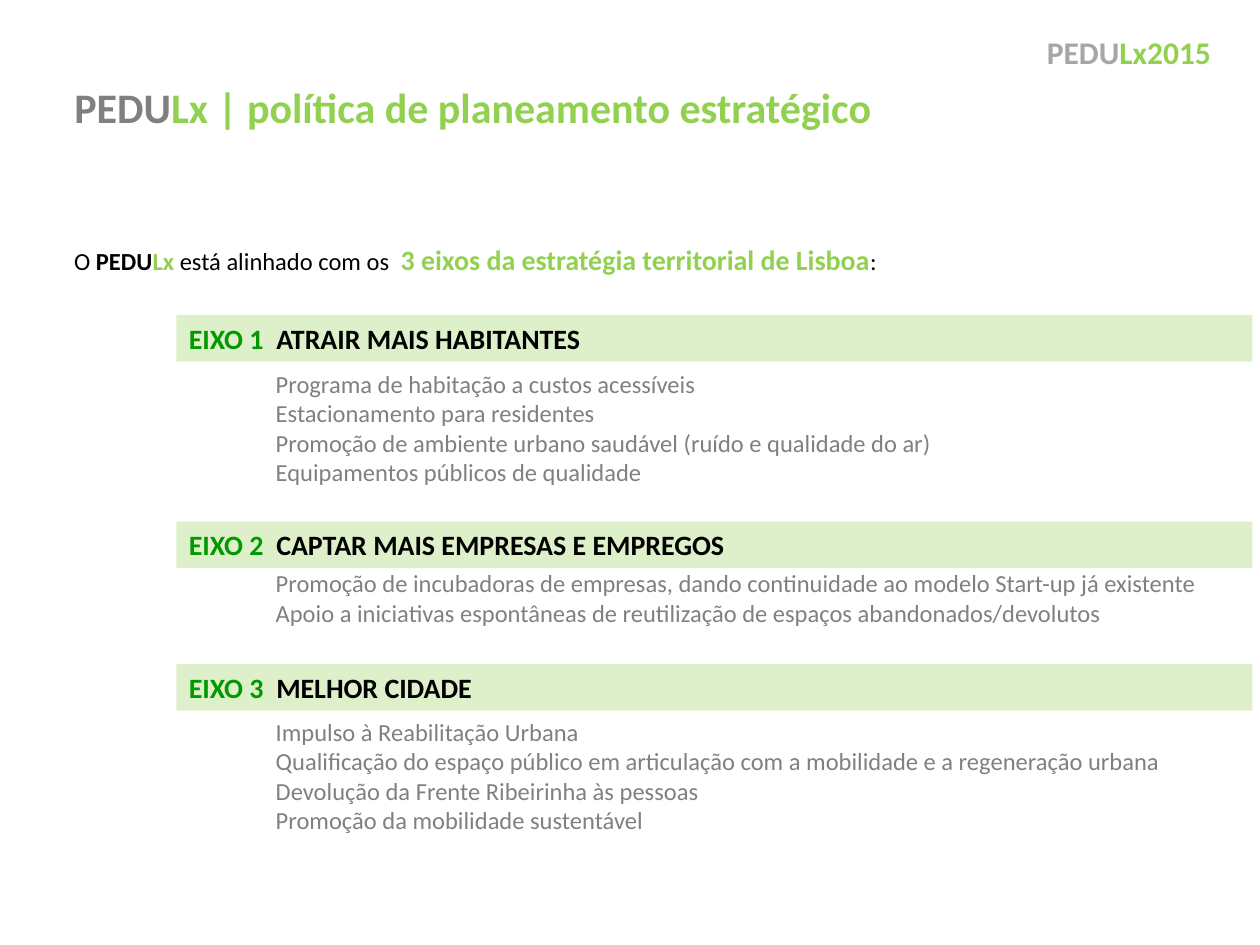
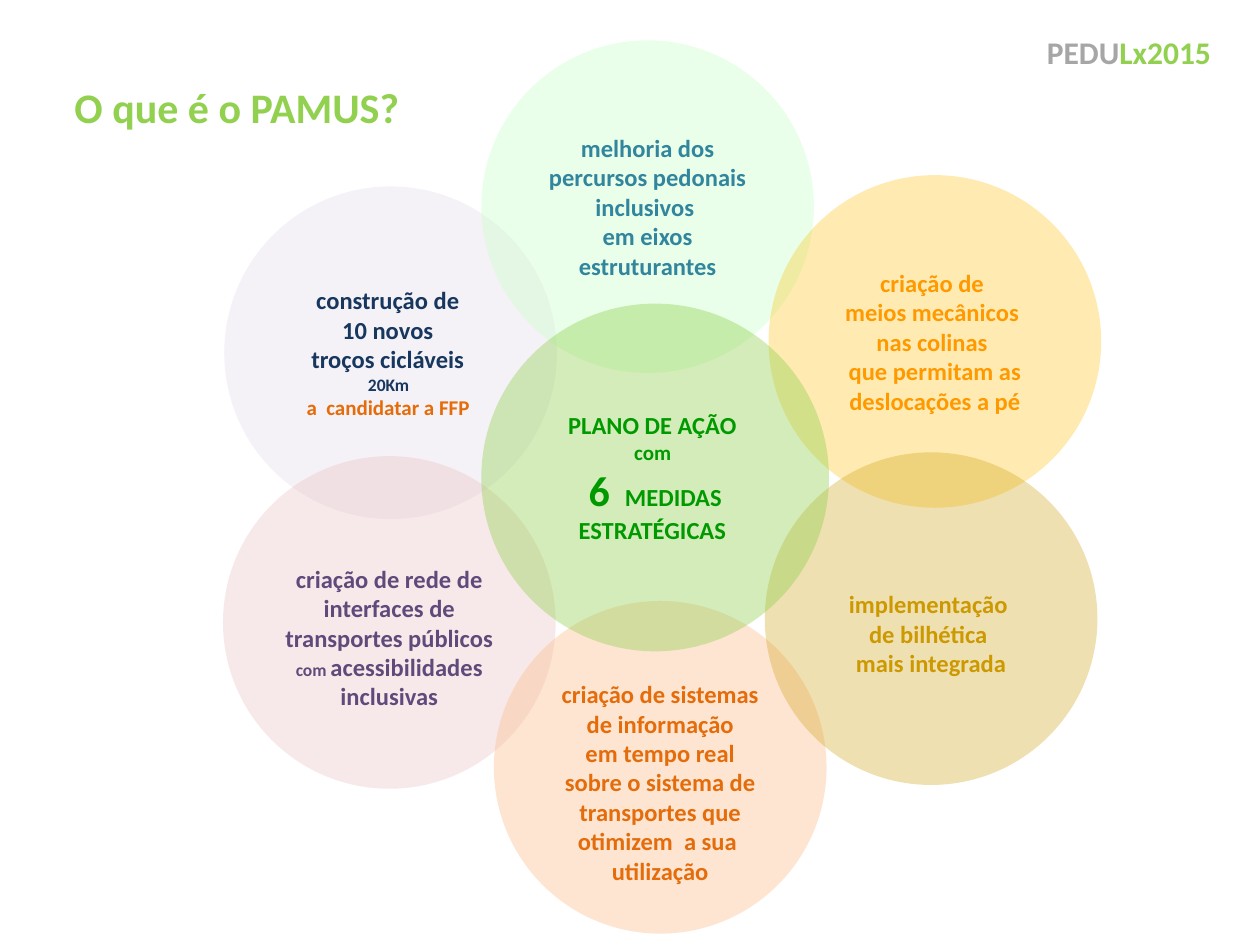
from dataclasses import dataclass

from lxml import etree
from pptx import Presentation
from pptx.dml.color import RGBColor
from pptx.enum.shapes import MSO_SHAPE
from pptx.enum.text import MSO_ANCHOR, PP_ALIGN
from pptx.oxml.ns import qn
from pptx.util import Inches, Pt

LEFT, CENTER, RIGHT = PP_ALIGN.LEFT, PP_ALIGN.CENTER, PP_ALIGN.RIGHT
TOP, MIDDLE = MSO_ANCHOR.TOP, MSO_ANCHOR.MIDDLE
RECTANGLE, OVAL = MSO_SHAPE.RECTANGLE, MSO_SHAPE.OVAL


@dataclass(frozen=True)
class Theme:
    font: str = "Calibri"
    lime: str = "92D050"
    green: str = "009900"
    gray: str = "808080"
    light_gray: str = "A6A6A6"
    black: str = "000000"
    navy: str = "17375E"
    teal: str = "31859C"
    amber: str = "FF9900"
    purple: str = "604A7B"
    orange: str = "E46C0A"
    ochre: str = "CC9900"
    title: int = 24
    header: int = 18
    heading: int = 16
    body: int = 14
    small: int = 12
    tiny: int = 10


T = Theme()

# Content: a paragraph is a list of runs; a run is text or (text, format changes)
HEADER = [[("PEDU", {"color": T.light_gray}), "Lx2015"]]

POLICY_TITLE = [[("PEDU", {"color": T.gray}), "Lx | política de planeamento estratégico"]]
INTRO = [[
    "O ",
    ("PEDU", {"bold": True}),
    ("Lx ", {"bold": True, "color": T.lime}),
    "está alinhado com os  ",
    ("3 eixos da estratégia territorial de Lisboa",
     {"bold": True, "color": T.lime, "size": T.heading}),
    ":",
]]
# Axis label, heading, band top, top of actions, actions
AXES = [
    ("EIXO 1  ", "ATRAIR MAIS HABITANTES", 2.5, 2.88, [
        "Programa de habitação a custos acessíveis",
        "Estacionamento para residentes",
        "Promoção de ambiente urbano saudável (ruído e qualidade do ar)",
        "Equipamentos públicos de qualidade",
    ]),
    ("EIXO 2  ", "CAPTAR MAIS EMPRESAS E EMPREGOS", 4.14, 4.46, [
        "Promoção de incubadoras de empresas, dando continuidade ao modelo Start-up já existente",
        "Apoio a iniciativas espontâneas de reutilização de espaços abandonados/devolutos",
    ]),
    ("EIXO 3  ", "MELHOR CIDADE", 5.27, 5.64, [
        "Impulso à Reabilitação Urbana",
        "Qualificação do espaço público em articulação com a mobilidade e a regeneração urbana",
        "Devolução da Frente Ribeirinha às pessoas",
        "Promoção da mobilidade sustentável",
    ]),
]

PAMUS_TITLE = [["O que é o PAMUS?"]]
# Left, top, diameter, fill, opacity %, text colour, text lowered by half a line, paragraphs
MEASURES = [
    (1.78, 1.48, 2.64, "E6E0EC", 40, T.navy, False, [
        ["construção de "], ["10 novos "], ["troços cicláveis "],
        [("20Km ", {"size": T.tiny})],
        [("a  candidatar a FFP ", {"size": T.small, "color": T.orange})],
    ]),
    (3.82, 0.32, 2.64, "CCFFCC", 40, T.teal, False, [
        ["melhoria dos percursos pedonais inclusivos "], ["em eixos estruturantes"],
    ]),
    (6.1, 1.39, 2.64, "FFC000", 30, T.amber, False, [
        ["criação de "], ["meios mecânicos "], ["nas colinas "],
        ["que permitam as deslocações a pé"],
    ]),
    (1.77, 3.62, 2.64, "E6B9B8", 30, T.purple, True, [
        ["criação de rede de interfaces de transportes públicos ",
         ("com ", {"size": T.tiny}), "acessibilidades inclusivas"],
    ]),
    (3.92, 4.77, 2.64, "FAC090", 40, T.orange, True, [
        ["criação de sistemas de informação"], [" em tempo real "],
        ["sobre o sistema de transportes que otimizem  a sua  utilização"],
    ]),
    (6.07, 3.59, 2.64, "CC9900", 30, T.ochre, True, [
        ["implementação "], ["de bilhética "], ["mais integrada"],
    ]),
    (3.82, 2.41, 2.76, T.lime, 40, T.green, False, [
        ["PLANO DE AÇÃO "],
        [("com ", {"size": T.small})],
        [("6 ", {"size": T.title}), " MEDIDAS ESTRATÉGICAS "],
    ]),
]

# Shared geometry, in inches
MARGIN = 0.49
BAND_LEFT, BAND_WIDTH, BAND_HEIGHT = 1.4, 8.54, 0.37
ACTIONS_LEFT, ACTIONS_WIDTH = 2.09, 7.86
LINE_HEIGHT, INSET = 0.235, 0.05


def write(frame, paragraphs, *, color, size=T.body, bold=False,
          align=LEFT, anchor=TOP, top_inset=INSET):
    """Fill a text frame; each run may override colour, size and weight."""
    frame.word_wrap = True
    frame.vertical_anchor = anchor
    frame.margin_left = frame.margin_right = Inches(0.1)
    frame.margin_top, frame.margin_bottom = Inches(top_inset), Inches(INSET)
    base = {"color": color, "size": size, "bold": bold}
    for number, runs in enumerate(paragraphs):
        paragraph = frame.add_paragraph() if number else frame.paragraphs[0]
        paragraph.alignment = align
        for item in runs:
            text, changes = (item, {}) if isinstance(item, str) else item
            style = {**base, **changes}
            run = paragraph.add_run()
            run.text = text
            run.font.name = T.font
            run.font.size = Pt(style["size"])
            run.font.bold = style["bold"]
            run.font.color.rgb = RGBColor.from_string(style["color"])


def add_text(slide, box, paragraphs, **style):
    label = slide.shapes.add_textbox(*map(Inches, box))
    write(label.text_frame, paragraphs, **style)
    return label


def add_tinted(slide, kind, box, fill, opacity, paragraphs, **style):
    """Add a borderless, translucent shape with text."""
    shape = slide.shapes.add_shape(kind, *map(Inches, box))
    shape.shadow.inherit = False
    shape.line.fill.background()
    shape.fill.solid()
    shape.fill.fore_color.rgb = RGBColor.from_string(fill)
    tint = shape.element.spPr.find(f"{qn('a:solidFill')}/{qn('a:srgbClr')}")
    etree.SubElement(tint, qn("a:alpha")).set("val", str(opacity * 1000))
    write(shape.text_frame, paragraphs, **style)


def add_titled_slide(deck, layout, paragraphs):
    slide = deck.slides.add_slide(layout)
    title = slide.shapes.title
    title.left, title.top = Inches(MARGIN), Inches(0.6)
    title.width, title.height = Inches(9.51), Inches(0.5)
    write(title.text_frame, paragraphs, color=T.lime, size=T.title, bold=True)
    return slide


def build_policy(deck, layout):
    slide = add_titled_slide(deck, layout, POLICY_TITLE)
    add_text(slide, (MARGIN, 1.88, 9.23, 0.37), INTRO, color=T.black)
    for axis, heading, band_top, actions_top, actions in AXES:
        add_tinted(slide, RECTANGLE, (BAND_LEFT, band_top, BAND_WIDTH, BAND_HEIGHT),
                   T.lime, 30, [[(axis, {"color": T.green}), heading]],
                   color=T.black, size=T.heading, bold=True)
        height = len(actions) * LINE_HEIGHT + 2 * INSET
        add_text(slide, (ACTIONS_LEFT, actions_top, ACTIONS_WIDTH, height),
                 [[action] for action in actions], color=T.gray)
    return slide


def build_pamus(deck, layout):
    slide = add_titled_slide(deck, layout, PAMUS_TITLE)
    for left, top, diameter, fill, opacity, color, lowered, paragraphs in MEASURES:
        add_tinted(slide, OVAL, (left, top, diameter, diameter), fill, opacity, paragraphs,
                   color=color, bold=True, align=CENTER, anchor=MIDDLE,
                   top_inset=INSET + LINE_HEIGHT * lowered)


def main():
    deck = Presentation()
    deck.slide_width, deck.slide_height = Inches(10), Inches(7.5)
    layout = deck.slide_layouts.get_by_name("Title Only")
    policy = build_policy(deck, layout)
    build_pamus(deck, layout)
    # The header moves to the layout, so both slides show it
    header = add_text(policy, (7.9, 0.21, 1.81, 0.71), HEADER,
                      color=T.lime, size=T.header, bold=True, align=RIGHT)
    layout.shapes.element.append(header.element)
    deck.save("out.pptx")


if __name__ == "__main__":
    main()
